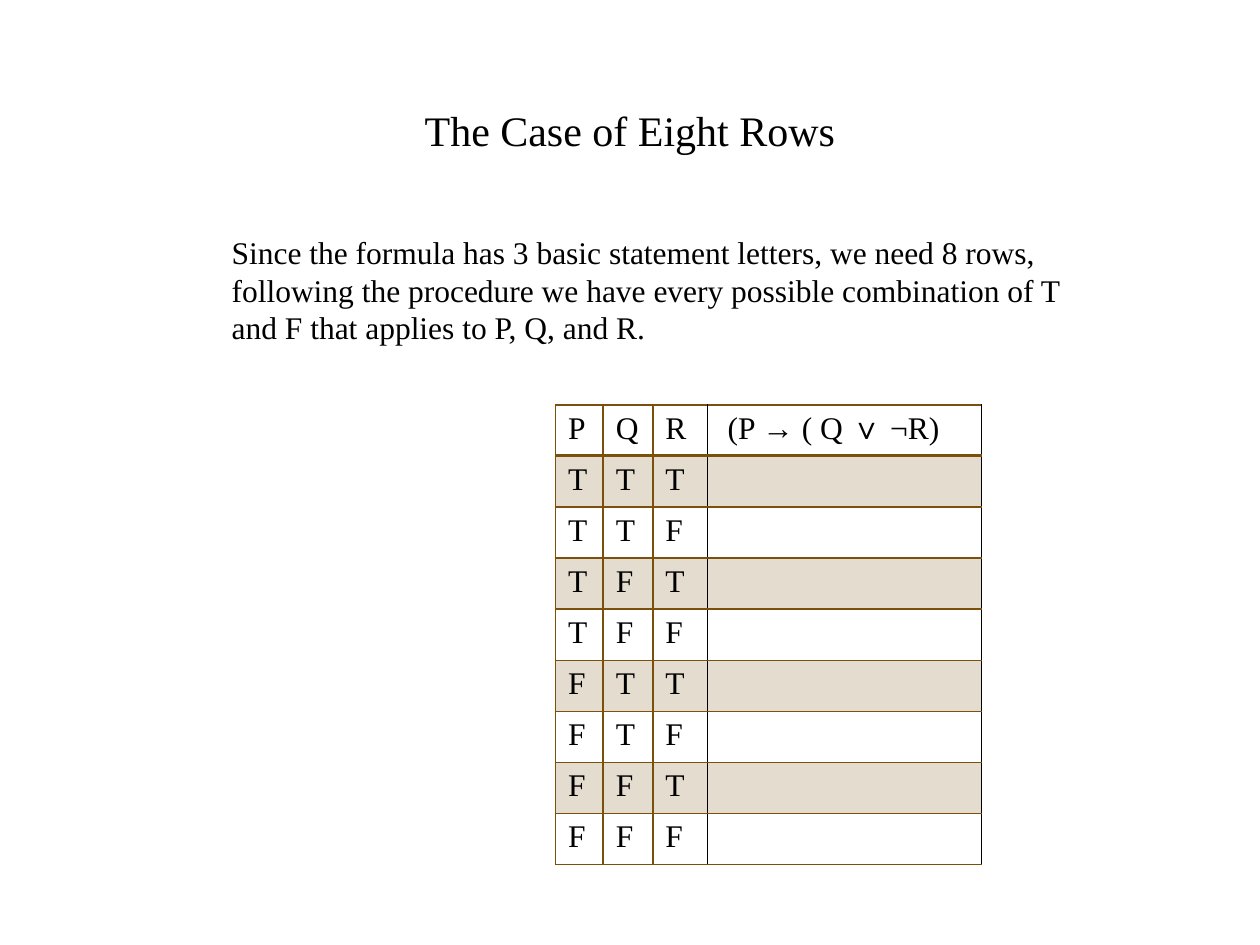
from itertools import product

from lxml import etree
from pptx import Presentation
from pptx import util as u
from pptx.dml.color import RGBColor
from pptx.enum import text
from pptx.oxml.ns import qn

BROWN, BLACK = "7A500A", "000000"


def style_paragraph(paragraph, size, color=BLACK):
    paragraph.font.name = "Times New Roman"
    paragraph.font.size = u.Pt(size)
    paragraph.font.color.rgb = RGBColor.from_string(color)


def add_border(cell, side, color, width):
    line = etree.SubElement(cell._tc.get_or_add_tcPr(), qn(f"a:{side}"), w=str(u.Pt(width)))
    fill = etree.SubElement(line, qn("a:solidFill"))
    etree.SubElement(fill, qn("a:srgbClr"), val=color)


presentation = Presentation()
presentation.slide_width, presentation.slide_height = u.Cm(25.4), u.Cm(19.05)
slide = presentation.slides.add_slide(presentation.slide_layouts[5])

# Title
title = slide.shapes.title
title.left, title.top, title.width, title.height = u.Cm(2.54), u.Cm(1.4), u.Cm(20.32), u.Cm(2.41)
title.text_frame.text = "The Case of Eight Rows"
title.text_frame.vertical_anchor = text.MSO_ANCHOR.MIDDLE
title.text_frame.paragraphs[0].alignment = text.PP_ALIGN.CENTER
style_paragraph(title.text_frame.paragraphs[0], 24)

# Truth table: every combination of T and F for three letters
rows = [("P", "Q", "R", "")] + [(*values, "") for values in product("TF", repeat=3)]
column_widths = [0.96, 1, 1.1, 5.53]
row_height = 1.03
table = slide.shapes.add_table(
    len(rows), len(column_widths), u.Cm(11.2), u.Cm(8.16),
    u.Cm(sum(column_widths)), u.Cm(row_height * len(rows))).table
table.first_row = table.horz_banding = False
for column, width in zip(table.columns, column_widths):
    column.width = u.Cm(width)

for row_index, values in enumerate(rows):
    table.rows[row_index].height = u.Cm(row_height)
    for column_index, value in enumerate(values):
        cell = table.cell(row_index, column_index)
        cell.text = value
        style_paragraph(cell.text_frame.paragraphs[0], 18)
        # The formula column has black sides; the header has a thicker rule below
        add_border(cell, "lnL", BLACK if column_index == 3 else BROWN, 1)
        add_border(cell, "lnR", BLACK if column_index >= 2 else BROWN, 1)
        add_border(cell, "lnT", BROWN, 2 if row_index == 1 else 1)
        add_border(cell, "lnB", BROWN, 2 if row_index == 0 else 1)
        # Every second row is tinted
        if row_index % 2:
            cell.fill.solid()
            cell.fill.fore_color.rgb = RGBColor.from_string(BROWN)
            tint = cell._tc.tcPr.find(qn("a:solidFill")).find(qn("a:srgbClr"))
            etree.SubElement(tint, qn("a:alpha"), val="20000")
        else:
            cell.fill.background()

# Formula in the header, with bold connectives
formula = table.cell(0, 3)
formula.margin_left = u.Cm(0.41)
for piece, bold in [("(P ", False), ("→", True), (" ( Q ", False), ("∨ ", True), ("¬R)", False)]:
    run = formula.text_frame.paragraphs[0].add_run()
    run.text = piece
    run.font.bold = bold

# Explanation
explanation = slide.shapes.add_textbox(u.Cm(4.42), u.Cm(4.57), u.Cm(17.5), u.Cm(2.57))
explanation.text_frame.word_wrap = True
explanation.text_frame.auto_size = text.MSO_AUTO_SIZE.SHAPE_TO_FIT_TEXT
explanation.text_frame.text = (
    "Since the formula has 3 basic statement letters, we need 8 rows, following the procedure "
    "we have every possible combination of T and F that applies to P, Q, and R.")
style_paragraph(explanation.text_frame.paragraphs[0], 18)

presentation.save("out.pptx")
